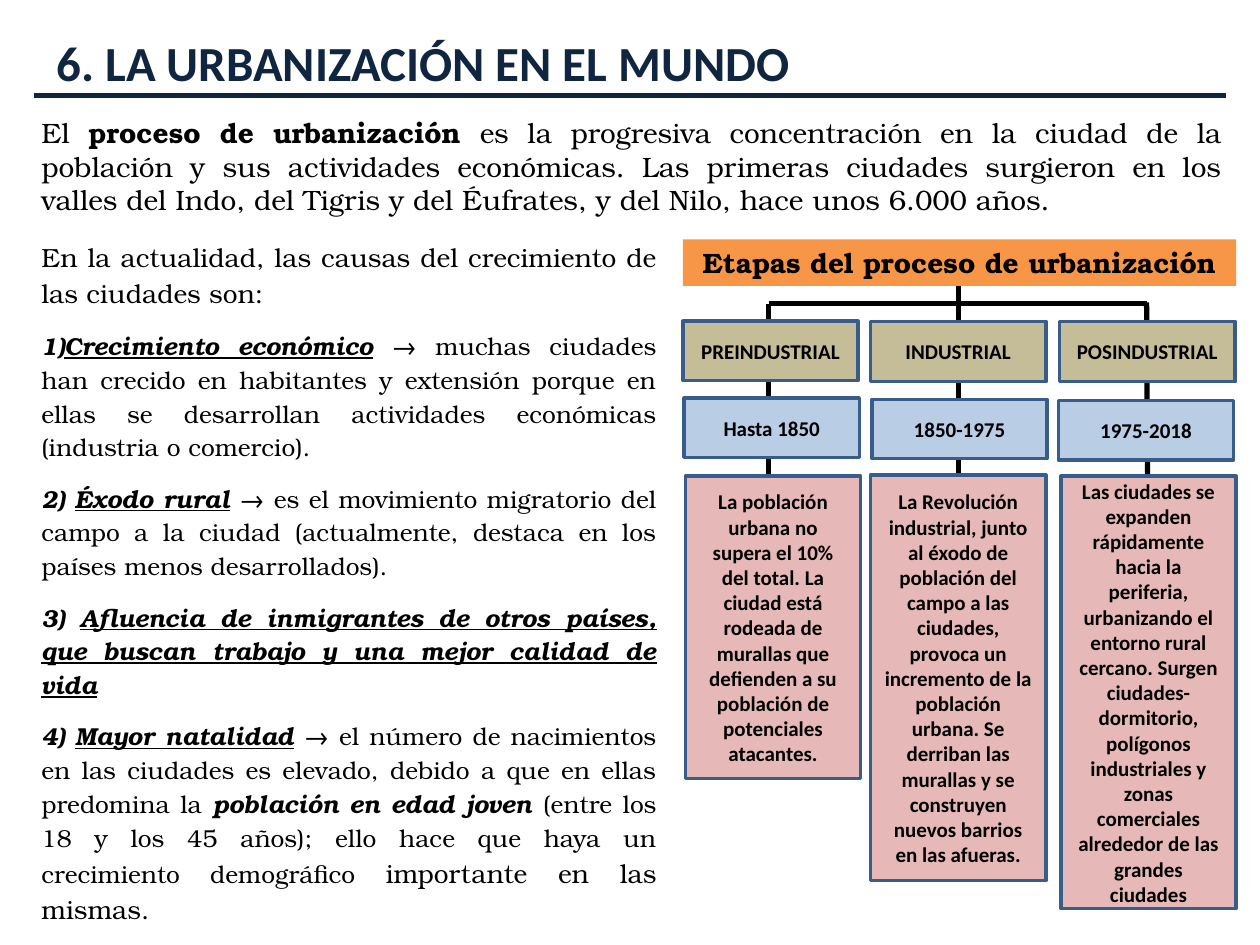
from typing import NamedTuple
from lxml.etree import SubElement as Sub
from pptx import Presentation
from pptx.dml.color import RGBColor as Rgb
from pptx.enum.shapes import MSO_CONNECTOR as Conn, MSO_SHAPE as Form
from pptx.enum.text import MSO_ANCHOR as Anchor, PP_ALIGN as Align
from pptx.oxml.ns import qn
from pptx.util import Inches, Pt

INK = {"navy": "10253F", "black": "000000", "orange": "F79646", "edge": "385D8A",
       "tan": "C4BD97", "blue": "B9CDE5", "pink": "E6B9B8"}
SANS, SERIF = "Calibri", "TeX Gyre Bonum"


class Run(NamedTuple):
    text: str
    marks: str = ""
    size: float = 14


class Para(NamedTuple):
    runs: list[Run]
    align: Align = Align.JUSTIFY
    lead: float | None = None
    before: float | None = None
    count: bool = False


class Area(NamedTuple):
    left: float
    top: float
    width: float
    height: float


class Rule(NamedTuple):
    start: tuple[float, float]
    end: tuple[float, float]
    ink: str = "black"


class Box(NamedTuple):
    area: Area
    fill: str
    text: str
    size: float = 12
    face: str = SANS
    edge: str | None = "edge"
    anchor: Anchor = Anchor.MIDDLE


def tint(name: str) -> Rgb:
    """Return the named colour."""
    return Rgb.from_string(INK[name])


def number(para) -> None:
    """Give a paragraph an automatic number such as 1)."""
    props = para._p.get_or_add_pPr()
    props.set("marL", "0")
    props.set("indent", str(-Inches(0.1)))
    shade = Sub(props, qn("a:buClr"))
    Sub(shade, qn("a:srgbClr"), val=INK["black"])
    Sub(props, qn("a:buAutoNum"), type="arabicParenR")


def write(frame, paras: list[Para], face: str, ink: str = "black") -> None:
    """Fill a text frame with formatted paragraphs."""
    frame.word_wrap = True
    for spot, item in enumerate(paras):
        para = frame.add_paragraph() if spot else frame.paragraphs[0]
        if item.count:
            number(para)
        form = {"alignment": item.align, "line_spacing": item.lead,
                "space_before": item.before and Pt(item.before)}
        for key, value in form.items():
            setattr(para, key, value)
        for part in item.runs:
            run = para.add_run()
            run.text = part.text
            look = {"name": face, "size": Pt(part.size), "bold": "b" in part.marks,
                    "italic": "i" in part.marks, "underline": "u" in part.marks}
            for key, value in look.items():
                setattr(run.font, key, value)
            run.font.color.rgb = tint(ink)


def label(slide, area: Area, paras: list[Para], face: str, ink: str = "black") -> None:
    """Add a text box."""
    box = slide.shapes.add_textbox(*map(Inches, area))
    write(box.text_frame, paras, face, ink)


def draw(slide, rule: Rule) -> None:
    """Add a straight line."""
    line = slide.shapes.add_connector(Conn.STRAIGHT, *map(Inches, rule.start + rule.end))
    line.line.color.rgb = tint(rule.ink)
    line.line.width = Pt(3)
    Sub(line._element.spPr, qn("a:effectLst"))


def place(slide, box: Box) -> None:
    """Add a filled box with centred bold text."""
    shape = slide.shapes.add_shape(Form.RECTANGLE, *map(Inches, box.area))
    shape.shadow.inherit = False
    shape.fill.solid()
    shape.fill.fore_color.rgb = tint(box.fill)
    if box.edge:
        shape.line.color.rgb = tint(box.edge)
        shape.line.width = Pt(2)
    else:
        shape.line.fill.background()
    shape.text_frame.vertical_anchor = box.anchor
    write(shape.text_frame, [Para([Run(box.text, "b", box.size)], Align.CENTER)], box.face)


def cause(*runs: Run) -> Para:
    """Return one numbered cause of city growth."""
    return Para(list(runs), lead=1.15, before=10, count=True)


TITLE = [Para([Run("6. LA URBANIZACIÓN EN EL MUNDO", "b", 28)], Align.LEFT)]
INTRO = [Para([
    Run("El ", size=16), Run("proceso de urbanización", "b", 16),
    Run(" es la progresiva concentración en la ciudad de la población y sus actividades "
        "económicas. Las primeras ciudades surgieron en los valles del Indo, del Tigris y "
        "del Éufrates, y del Nilo, hace unos 6.000 años.", size=16)])]
CAUSES = [
    Para([Run("En la actualidad, las causas del crecimiento de las ciudades son:", size=15)],
         lead=1.15),
    cause(Run("Crecimiento económico", "biu"),
          Run(" → muchas ciudades han crecido en habitantes y extensión porque en ellas se "
              "desarrollan actividades económicas (industria o comercio).")),
    cause(Run(" ", "bi"), Run("Éxodo rural", "biu"),
          Run(" → es el movimiento migratorio del campo a la ciudad (actualmente, destaca "
              "en los países menos desarrollados).")),
    cause(Run(" ", "bi"),
          Run("Afluencia de inmigrantes de otros países, que buscan trabajo y una mejor "
              "calidad de vida", "biu")),
    cause(Run(" ", "bi"), Run("Mayor natalidad", "biu"),
          Run(" → el número de nacimientos en las ciudades es elevado, debido a que en "
              "ellas predomina la "),
          Run("población en edad joven ", "bi"),
          Run("(entre los 18 y los 45 años); ello hace que haya un crecimiento demográfico "),
          Run("importante en las mismas.", size=15)),
]
RULES = [Rule((6.1, 2.41), (9.1, 2.41)), Rule((7.61, 2.27), (7.61, 6.11)),
         Rule((6.1, 2.41), (6.1, 5.8)), Rule((9.1, 2.4), (9.12, 6.11))]
HEAD = Box(Area(5.42, 1.9, 4.39, 0.37), "orange", "Etapas del proceso de urbanización",
           16, SERIF, None, Anchor.TOP)
WIDE = 1.39
STAGES = [
    ("tan", [(5.42, 2.55, 0.47, "PREINDUSTRIAL"), (6.91, 2.55, 0.48, "INDUSTRIAL"),
             (8.41, 2.55, 0.48, "POSINDUSTRIAL")]),
    ("blue", [(5.43, 3.16, 0.47, "Hasta 1850"), (6.92, 3.17, 0.47, "1850-1975"),
              (8.4, 3.18, 0.47, "1975-2018")]),
    ("pink", [
        (5.44, 3.78, 2.4,
         "La población urbana no supera el 10% del total. La ciudad está rodeada de "
         "murallas que defienden a su población de potenciales atacantes."),
        (6.91, 3.77, 3.22,
         "La Revolución industrial, junto al éxodo de población del campo a las ciudades, "
         "provoca un incremento de la población urbana. Se derriban las murallas y se "
         "construyen nuevos barrios en las afueras."),
        (8.42, 3.78, 3.43,
         "Las ciudades se expanden rápidamente hacia la periferia, urbanizando el entorno "
         "rural cercano. Surgen ciudades-dormitorio, polígonos industriales y zonas "
         "comerciales alrededor de las grandes ciudades")]),
]


def main() -> None:
    """Build and save the slide."""
    deck = Presentation()
    deck.slide_width, deck.slide_height = Inches(10), Inches(7.5)
    slide = deck.slides.add_slide(deck.slide_layouts[6])
    draw(slide, Rule((0.27, 0.76), (9.73, 0.76), "navy"))
    label(slide, Area(0.35, 0.21, 9.21, 0.57), TITLE, SANS, "navy")
    label(slide, Area(0.23, 0.87, 9.57, 0.91), INTRO, SERIF)
    label(slide, Area(0.23, 1.83, 5.08, 5.62), CAUSES, SERIF)
    place(slide, HEAD)
    for rule in RULES:
        draw(slide, rule)
    for fill, row in STAGES:
        for left, top, height, text in row:
            place(slide, Box(Area(left, top, WIDE, height), fill, text))
    deck.save("out.pptx")


if __name__ == "__main__":
    main()
